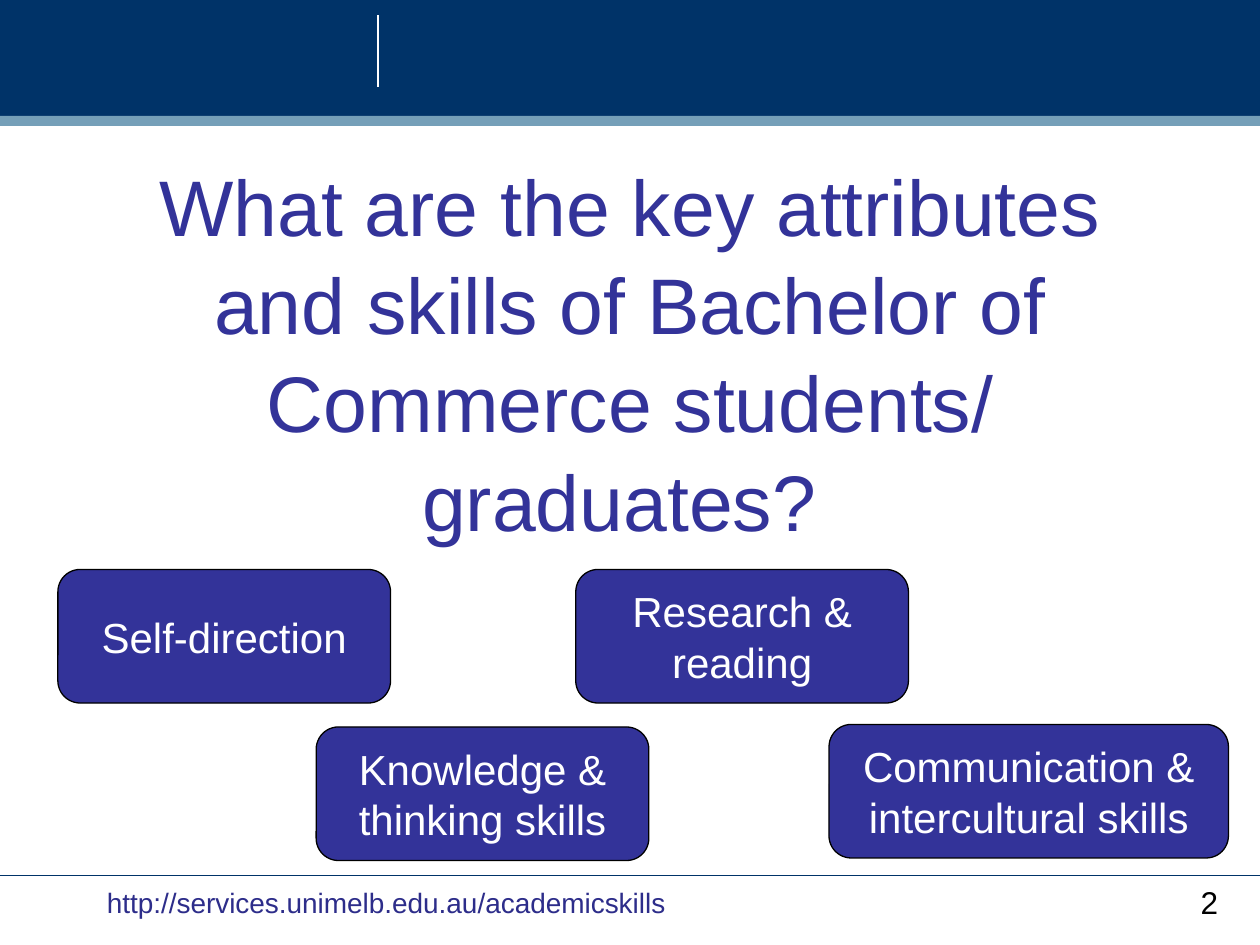
import pptx
import pptx.util
import pptx.dml.color
import pptx.enum.shapes
import pptx.enum.text
import pptx.oxml.ns
import lxml.etree

WIDE, HIGH = 10, 7.5
NAVY, STEEL, BLUE, WHITE, BLACK = "003368", "759FB8", "333399", "FFFFFF", "000000"
TITLE = "What are the key attributes and skills of Bachelor of Commerce students/ graduates? "
LINK = "http://services.unimelb.edu.au/academicskills"
PAGE = "2"
SKILLS = [
    ("Self-direction", 0.46, 4.52, 2.64),
    ("Knowledge & thinking skills", 2.51, 5.77, 2.64),
    ("Research & reading", 4.57, 4.52, 2.64),
    ("Communication & intercultural skills", 6.58, 5.75, 3.17),
]
BANDS = [(0, 0.92, NAVY), (0.92, 0.08, STEEL)]
RULES = [(3, 0.12, 3, 0.69, WHITE), (0, 6.95, WIDE, 6.95, NAVY)]
CARD = 1.06

inch = pptx.util.Inches
kinds = pptx.enum.shapes.MSO_SHAPE
align = pptx.enum.text.PP_ALIGN
anchor = pptx.enum.text.MSO_ANCHOR


def color(code):
    return pptx.dml.color.RGBColor.from_string(code)


def write(shape, words, size, code, side=align.LEFT):
    frame = shape.text_frame
    frame.word_wrap = True
    frame.text = words
    para = frame.paragraphs[0]
    para.alignment = side
    font = para.runs[0].font
    font.name, font.size = "Arial", pptx.util.Pt(size)
    font.color.rgb = color(code)
    return para


def block(kind, place, fill, edge=None):
    shape = slide.shapes.add_shape(kind, *map(inch, place))
    shape.shadow.inherit = False
    shape.fill.solid()
    shape.fill.fore_color.rgb = color(fill)
    if edge:
        shape.line.color.rgb = color(edge)
        shape.line.width = pptx.util.Pt(0.75)
    else:
        shape.line.fill.background()
    return shape


def rule(ends, code):
    line = slide.shapes.add_connector(
        pptx.enum.shapes.MSO_CONNECTOR.STRAIGHT, *map(inch, ends))
    line.line.color.rgb = color(code)
    line.line.width = pptx.util.Pt(0.75)
    lxml.etree.SubElement(line._element.spPr, pptx.oxml.ns.qn("a:effectLst"))


def label(place, *style):
    return write(slide.shapes.add_textbox(*map(inch, place)), *style)


deck = pptx.Presentation()
deck.slide_width, deck.slide_height = inch(WIDE), inch(HIGH)
slide = deck.slides.add_slide(deck.slide_layouts[6])

for top, high, code in BANDS:
    block(kinds.RECTANGLE, (0, top, WIDE, high), code)
for *ends, code in RULES:
    rule(ends, code)

label((9.43, 6.96, 0.62, 0.3), PAGE, 18, BLACK)
label((0.75, 6.98, 6.83, 0.37), LINK, 16, "2D2D8A")
title = label((0.75, 1.17, 8.5, 5.33), TITLE, 45, BLUE, align.CENTER)
title.line_spacing = 1.04

for words, left, top, wide in SKILLS:
    card = block(kinds.ROUNDED_RECTANGLE, (left, top, wide, CARD), BLUE, BLACK)
    card.text_frame.vertical_anchor = anchor.MIDDLE
    write(card, words, 24, WHITE, align.CENTER)

deck.save("out.pptx")
